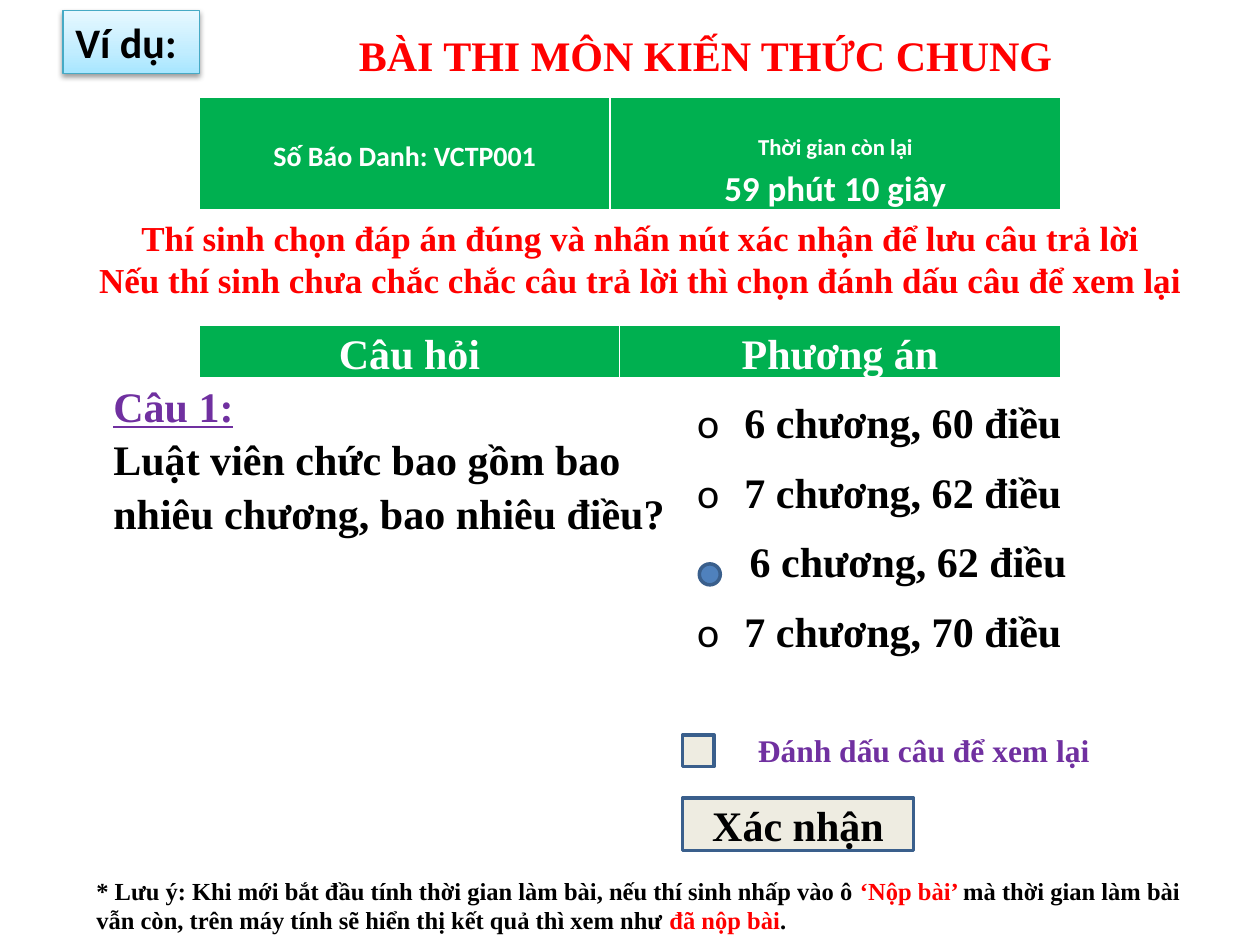
from copy import deepcopy

from lxml import etree
from pptx import Presentation, util as u
from pptx.dml.color import RGBColor
from pptx.enum import shapes, text
from pptx.oxml import ns

PX = 7620  # EMU, 120 px to the inch
SERIF, SANS = "Times New Roman", "Calibri"
RED, GREEN, PURPLE = "FF0000", "00B050", "7030A0"
BLACK, WHITE, CREAM, NAVY = "000000", "FFFFFF", "EEECE1", "3A5F8C"
CENTER = text.PP_ALIGN.CENTER
MIDDLE, BOTTOM = text.MSO_ANCHOR.MIDDLE, text.MSO_ANCHOR.BOTTOM
RECT, OVAL = shapes.MSO_SHAPE.RECTANGLE, shapes.MSO_SHAPE.OVAL


def px(*lengths):
    return [u.Emu(length * PX) for length in lengths]


def rgb(value):
    return RGBColor.from_string(value)


def child(parent, tag, **attributes):
    return etree.SubElement(parent, ns.qn(tag), attributes)


def write(frame, words, size=24, color=BLACK, font=SERIF, align=None,
          spacing=None, underline=None, indent=0, bullet=None):
    """Add one bold paragraph; words is a string or a list of (string, color)."""
    line = frame.paragraphs[0] if not frame.text else frame.add_paragraph()
    line.alignment = align
    line.line_spacing = spacing
    runs = [(words, color)] if isinstance(words, str) else words
    for words_part, part_color in runs:
        run = line.add_run()
        run.text = words_part
        run.font.size = u.Pt(size)
        run.font.name = font
        run.font.bold = True
        run.font.underline = underline
        run.font.color.rgb = rgb(part_color)
    if indent:
        properties = line._p.get_or_add_pPr()
        properties.set("marL", str(indent * PX))
        if bullet:
            properties.set("indent", str(-indent * PX))
            child(properties, "a:buFont", typeface=SANS)
            child(properties, "a:buChar", char=bullet)


def add_text(slide, box, lines, **style):
    frame = slide.shapes.add_textbox(*px(*box)).text_frame
    frame.word_wrap = True
    for line in lines:
        write(frame, line, **style)


def add_box(slide, kind, box, fill=None, line=NAVY, width=2):
    shape = slide.shapes.add_shape(kind, *px(*box))
    shape.shadow.inherit = False
    if fill:
        shape.fill.solid()
        shape.fill.fore_color.rgb = rgb(fill)
    shape.line.color.rgb = rgb(line)
    shape.line.width = u.Pt(width)
    return shape


def add_gradient(shape, stops, angle):
    shape.fill.gradient()
    shape.fill.gradient_angle = angle
    stop_list = shape._element.spPr.find(".//" + ns.qn("a:gsLst"))
    stop_list.append(deepcopy(stop_list[0]))
    for stop, (position, color) in zip(shape.fill.gradient_stops, stops):
        stop.position = position
        stop.color.rgb = rgb(color)


def add_soft_shadow(shape):
    effects = shape._element.spPr.find(ns.qn("a:effectLst"))
    shadow = child(effects, "a:outerShdw", blurRad="40000", dist="20000",
                   dir="5400000", rotWithShape="0")
    color = child(shadow, "a:srgbClr", val=BLACK)
    child(color, "a:alpha", val="38000")


def add_borders(cell):
    properties = cell._tc.get_or_add_tcPr()
    for index, (side, points) in enumerate(zip("LRTB", (1, 1, 1, 3))):
        border = child(properties, f"a:ln{side}", w=str(u.Pt(points)))
        child(child(border, "a:solidFill"), "a:srgbClr", val=WHITE)
        properties.insert(index, border)


def add_row(slide, left, top, widths, height, fill):
    """Add a one-row table and return its cells."""
    table = slide.shapes.add_table(
        1, len(widths), *px(left, top, sum(widths), height)).table
    for column, width in zip(table.columns, widths):
        column.width = u.Emu(width * PX)
    cells = list(table.rows[0].cells)
    for cell in cells:
        cell.margin_left = cell.margin_right = u.Emu(8 * PX)
        cell.margin_top = cell.margin_bottom = 0
        cell.fill.solid()
        cell.fill.fore_color.rgb = rgb(fill)
        add_borders(cell)
    return cells


def add_candidate_bar(slide):
    style = dict(color=WHITE, font=SANS, align=CENTER, spacing=1.15)
    candidate, timer = add_row(slide, 190, 93, (391, 429), 108, GREEN)
    candidate.vertical_anchor = MIDDLE
    write(candidate.text_frame, "Số Báo Danh: VCTP001", size=16, **style)
    timer.vertical_anchor = BOTTOM
    write(timer.text_frame, "Thời gian còn lại", size=13, **style)
    write(timer.text_frame, "59 phút 10 giây", size=20, **style)


def add_question(slide):
    headings = add_row(slide, 190, 310, (400, 420), 50, GREEN)
    for cell, heading in zip(headings, ("Câu hỏi", "Phương án")):
        write(cell.text_frame, heading, color=WHITE, align=CENTER, spacing=1.15)

    question, answers = add_row(slide, 100, 360, (556, 434), 288, WHITE)
    write(question.text_frame, "Câu 1:", color=PURPLE, underline=True, spacing=1.15)
    write(question.text_frame,
          "Luật viên chức bao gồm bao nhiêu chương, bao nhiêu điều?", spacing=1.15)
    chosen = "6 chương, 62 điều"
    for answer in ("6 chương, 60 điều", "7 chương, 62 điều",
                   chosen, "7 chương, 70 điều"):
        marker = dict(indent=50) if answer == chosen else dict(indent=45, bullet="o")
        write(answers.text_frame, answer, spacing=1.5, **marker)
    add_box(slide, OVAL, (666, 537, 20, 20), "4F81BD")


def add_controls(slide):
    add_box(slide, RECT, (650, 700, 30, 30), CREAM)
    add_text(slide, (710, 690, 380, 48), ["Đánh dấu câu để xem lại"],
             size=18, color=PURPLE)
    button = add_box(slide, RECT, (650, 760, 220, 50), CREAM)
    button.text_frame.vertical_anchor = MIDDLE
    write(button.text_frame, "Xác nhận", align=CENTER)


def main():
    deck = Presentation()
    deck.slide_width, deck.slide_height = px(1200, 900)
    slide = deck.slides.add_slide(deck.slide_layouts[6])

    label = add_box(slide, RECT, (60, 10, 130, 60), line="46AAC5", width=0.75)
    add_gradient(label, ((0, "A7E6FF"), (0.35, "C1EDFF"), (1, "E7F8FF")), 90)
    add_soft_shadow(label)
    write(label.text_frame, "Ví dụ:", font=SANS, align=text.PP_ALIGN.LEFT)

    add_text(slide, (330, 22, 690, 60), ["BÀI THI MÔN KIẾN THỨC CHUNG"], color=RED)
    add_candidate_bar(slide)
    add_text(slide, (80, 200, 1060, 92), [
        "Thí sinh chọn đáp án đúng và nhấn nút xác nhận để lưu câu trả lời",
        "Nếu thí sinh chưa chắc chắc câu trả lời thì chọn đánh dấu câu để xem lại",
    ], size=20, color=RED, align=CENTER)
    add_question(slide)
    add_controls(slide)
    add_text(slide, (80, 828, 1070, 68), [[
        ("* Lưu ý: Khi mới bắt đầu tính thời gian làm bài, "
         "nếu thí sinh nhấp vào ô ", BLACK),
        ("‘Nộp bài’ ", RED),
        ("mà thời gian làm bài vẫn còn, trên máy tính sẽ hiển thị "
         "kết quả thì xem như ", BLACK),
        ("đã nộp bài", RED),
        (".", BLACK),
    ]], size=14)
    deck.save("out.pptx")


if __name__ == "__main__":
    main()
